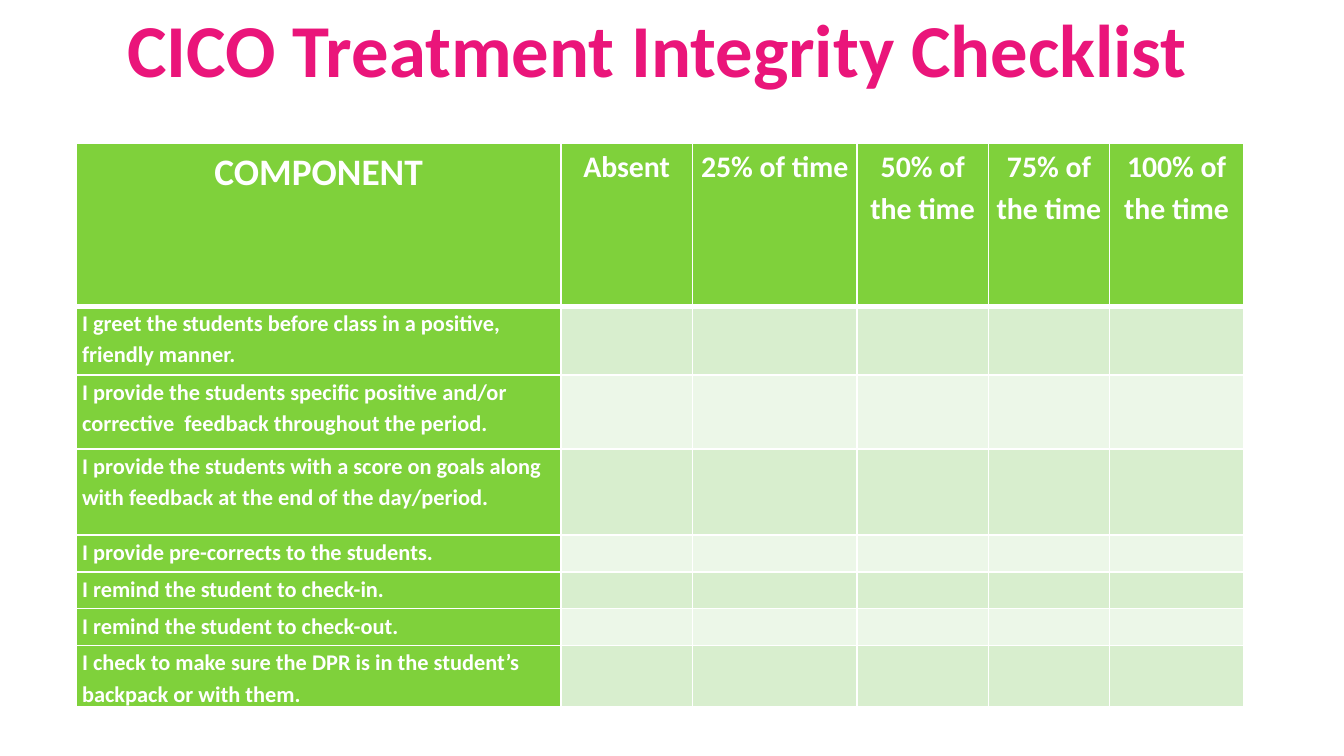
from dataclasses import dataclass

from lxml import etree
from pptx import Presentation
from pptx.dml.color import RGBColor
from pptx.enum.text import MSO_ANCHOR, PP_ALIGN
from pptx.oxml.ns import qn
from pptx.util import Pt

CENTER, LEFT = PP_ALIGN.CENTER, PP_ALIGN.LEFT
MIDDLE, TOP = MSO_ANCHOR.MIDDLE, MSO_ANCHOR.TOP


@dataclass(frozen=True)
class Theme:
    font: str = "Calibri"
    title: str = "EA157A"
    green: str = "7FD13B"
    bands: tuple = ("D8EECE", "ECF7E8")
    white: str = "FFFFFF"
    title_size: float = 40
    component_size: float = 20
    rating_size: float = 16
    body_size: float = 12
    line_spacing: float = 1.15
    rule: float = 1
    header_rule: float = 3


RATINGS = ["Absent", "25% of time", "50% of the time", "75% of the time",
           "100% of the time"]
COMPONENTS = [
    "I greet the students before class in a positive, friendly manner.",
    "I provide the students specific positive and/or corrective  feedback "
    "throughout the period.",
    "I provide the students with a score on goals along with feedback at the "
    "end of the day/period.",
    "I provide pre-corrects to the students.",
    "I remind the student to check-in.",
    "I remind the student to check-out.",
    "I check to make sure the DPR is in the student’s backpack or with them.",
]
COLUMN_WIDTHS = [259.5, 70.5, 88.2, 70.3, 65, 71.7]
ROW_HEIGHTS = [87.3, 37, 39.6, 46.2, 19.7, 19.7, 19.7, 33]


def set_all(target, values):
    for name, value in values.items():
        setattr(target, name, value)


class SlideBuilder:
    def __init__(self, slide, theme):
        self.slide = slide
        self.theme = theme

    def add_text(self, tf, text, size, color, align):
        p = tf.paragraphs[0]
        p.alignment = align
        r = p.add_run()
        r.text = text
        set_all(r.font, {"name": self.theme.font, "size": Pt(size), "bold": True})
        r.font.color.rgb = RGBColor.from_string(color)
        return p

    def title(self, text, left, top, width, height):
        sp = self.slide.shapes.add_textbox(Pt(left), Pt(top), Pt(width), Pt(height))
        tf = sp.text_frame
        set_all(tf, {"word_wrap": False, "vertical_anchor": MIDDLE})
        self.add_text(tf, text, self.theme.title_size, self.theme.title, CENTER)

    def borders(self, cell, widths):
        """Draw white rules; widths maps lnL, lnR, lnT and lnB to points."""
        tc_pr = cell._tc.get_or_add_tcPr()
        for i, (side, width) in enumerate(widths.items()):
            ln = etree.Element(qn(f"a:{side}"), w=str(Pt(width)))
            fill = etree.SubElement(ln, qn("a:solidFill"))
            etree.SubElement(fill, qn("a:srgbClr"), val=self.theme.white)
            tc_pr.insert(i, ln)

    def cell(self, cell, fill, top_rule, bottom_rule):
        set_all(cell, {"margin_left": Pt(3), "margin_right": Pt(3),
                       "margin_top": 0, "margin_bottom": 0,
                       "vertical_anchor": TOP})
        cell.fill.solid()
        cell.fill.fore_color.rgb = RGBColor.from_string(fill)
        rule = self.theme.rule
        self.borders(cell, {"lnL": rule, "lnR": rule,
                            "lnT": top_rule, "lnB": bottom_rule})

    def cell_text(self, cell, text, size, align):
        p = self.add_text(cell.text_frame, text, size, self.theme.white, align)
        p.line_spacing = self.theme.line_spacing

    def empty_cell(self, cell):
        """Keep the blank line small enough for the shortest rows."""
        end = cell.text_frame.paragraphs[0]._p.get_or_add_endParaRPr()
        end.set("sz", str(int(self.theme.body_size * 100)))

    def checklist(self, left, top):
        th = self.theme
        frame = self.slide.shapes.add_table(
            len(ROW_HEIGHTS), len(COLUMN_WIDTHS), Pt(left), Pt(top),
            Pt(sum(COLUMN_WIDTHS)), Pt(sum(ROW_HEIGHTS)))
        table = frame.table
        for column, width in zip(table.columns, COLUMN_WIDTHS):
            column.width = Pt(width)
        for row, height in zip(table.rows, ROW_HEIGHTS):
            row.height = Pt(height)

        for j, text in enumerate(["COMPONENT"] + RATINGS):
            cell = table.cell(0, j)
            self.cell(cell, th.green, th.rule, th.header_rule)
            size = th.rating_size if j else th.component_size
            self.cell_text(cell, text, size, CENTER)

        for i, text in enumerate(COMPONENTS, start=1):
            top_rule = th.header_rule if i == 1 else th.rule
            self.cell(table.cell(i, 0), th.green, top_rule, th.rule)
            self.cell_text(table.cell(i, 0), text, th.body_size, LEFT)
            for j in range(1, len(COLUMN_WIDTHS)):
                self.cell(table.cell(i, j), th.bands[(i - 1) % 2], top_rule, th.rule)
                self.empty_cell(table.cell(i, j))


def main():
    prs = Presentation()
    prs.slide_width, prs.slide_height = Pt(720), Pt(405)
    s = SlideBuilder(prs.slides.add_slide(prs.slide_layouts[6]), Theme())
    s.title("CICO Treatment Integrity Checklist", 58, -2, 588, 55.5)
    s.checklist(41, 76.7)
    prs.save("out.pptx")


if __name__ == "__main__":
    main()
